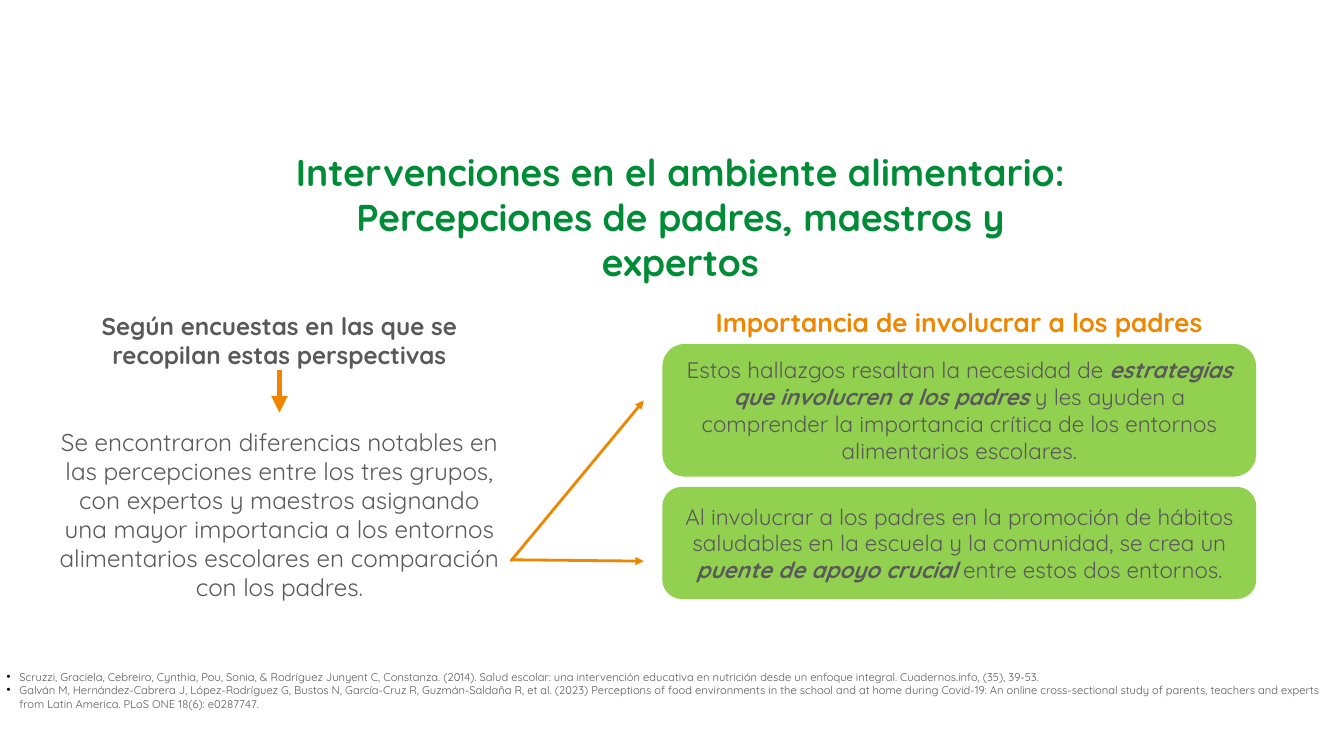
from dataclasses import dataclass

from lxml import etree
from pptx import Presentation
from pptx import util as u
from pptx.dml.color import RGBColor
from pptx.enum import shapes, text
from pptx.oxml.ns import qn

PX = 9144  # 100 px to the inch


@dataclass(frozen=True)
class Theme:
    font: str = "Quicksand"
    green: RGBColor = RGBColor(0x00, 0x8B, 0x36)
    orange: RGBColor = RGBColor(0xEF, 0x86, 0x00)
    grey: RGBColor = RGBColor(0x59, 0x59, 0x59)
    lime: RGBColor = RGBColor(0x92, 0xD0, 0x50)
    title: int = 40
    heading: int = 28
    body: int = 26
    card: int = 24
    source: int = 12


theme = Theme()


def style(para, size, color, bold=False, align=text.PP_ALIGN.CENTER):
    para.alignment = align
    para.font.name = theme.font
    para.font.size = u.Pt(size)
    para.font.color.rgb = color
    para.font.bold = bold


def add_box(left, top, width, height):
    box = page.shapes.add_textbox(left * PX, top * PX, width * PX, height * PX)
    box.text_frame.word_wrap = True
    return box.text_frame


deck = Presentation()
deck.slide_width, deck.slide_height = 2000 * PX, 1125 * PX
page = deck.slides.add_slide(deck.slide_layouts[5])

# Title
title = page.shapes.title
title.left, title.top, title.width, title.height = 420 * PX, 222 * PX, 1185 * PX, 153 * PX
frame = title.text_frame
frame.margin_left = frame.margin_top = frame.margin_right = frame.margin_bottom = 0
frame.vertical_anchor = text.MSO_ANCHOR.TOP
frame.auto_size = text.MSO_AUTO_SIZE.NONE
frame.word_wrap = True
frame.text = ("Intervenciones en el ambiente alimentario: "
              "Percepciones de padres, maestros y expertos")
style(frame.paragraphs[0], theme.title, theme.green, bold=True)

# Heading above the cards
frame = add_box(1047, 451, 760, 57)
frame.text = "Importancia de involucrar a los padres"
style(frame.paragraphs[0], theme.heading, theme.orange, bold=True)

# Survey finding
frame = add_box(72, 458, 688, 448)
frame.text = "Según encuestas en las que se recopilan estas perspectivas"
style(frame.paragraphs[0], theme.body, theme.grey, bold=True)
para = frame.add_paragraph()
para.text = ("Se encontraron diferencias notables en las percepciones entre los tres "
             "grupos, con expertos y maestros asignando una mayor importancia a los "
             "entornos alimentarios escolares en comparación con los padres.")
style(para, theme.body, theme.grey)
para.space_before = u.Pt(62)

# Cards: top, height, and text before, within and after the emphasis
cards = [
    (513, 195, "Estos hallazgos resaltan la necesidad de ",
     "estrategias que involucren a los padres",
     " y les ayuden a comprender la importancia crítica de los entornos "
     "alimentarios escolares."),
    (726, 164, "Al involucrar a los padres en la promoción de hábitos saludables en la "
     "escuela y la comunidad, se crea un ",
     "puente de apoyo crucial", " entre estos dos entornos."),
]
for top, height, before, emphasis, after in cards:
    card = page.shapes.add_shape(shapes.MSO_SHAPE.ROUNDED_RECTANGLE,
                                 987 * PX, top * PX, 881 * PX, height * PX)
    card.shadow.inherit = False
    card.fill.solid()
    card.fill.fore_color.rgb = theme.lime
    card.line.color.rgb = theme.lime
    card.line.width = u.Pt(2)
    card.text_frame.word_wrap = True
    card.text_frame.vertical_anchor = text.MSO_ANCHOR.MIDDLE
    para = card.text_frame.paragraphs[0]
    style(para, theme.card, theme.grey)
    for words in (before, emphasis, after):
        span = para.add_run()
        span.text = words
        span.font.color.rgb = theme.grey
        if words == emphasis:
            span.font.bold = span.font.italic = True

# Arrows: start, end, width in points
arrows = [
    ((416, 551), (416, 614), 6),
    ((760, 835), (958, 596), 3),
    ((760, 833), (958, 835), 3),
]
for (x1, y1), (x2, y2), width in arrows:
    arrow = page.shapes.add_connector(shapes.MSO_CONNECTOR.STRAIGHT,
                                      x1 * PX, y1 * PX, x2 * PX, y2 * PX)
    arrow.line.color.rgb = theme.orange
    arrow.line.width = u.Pt(width)
    etree.SubElement(arrow.line._get_or_add_ln(), qn("a:tailEnd"), type="triangle")
    etree.SubElement(arrow._element.spPr, qn("a:effectLst"))

# References
references = [
    "Scruzzi, Graciela, Cebreiro, Cynthia, Pou, Sonia, & Rodríguez Junyent C, Constanza. "
    "(2014). Salud escolar: una intervención educativa en nutrición desde un enfoque "
    "integral. Cuadernos.info, (35), 39-53.",
    "Galván M, Hernández-Cabrera J, López-Rodríguez G, Bustos N, García-Cruz R, "
    "Guzmán-Saldaña R, et al. (2023) Perceptions of food environments in the school and at "
    "home during Covid-19: An online cross-sectional study of parents, teachers and experts "
    "from Latin America. PLoS ONE 18(6): e0287747.",
]
frame = add_box(0, 992, 2000, 71)
frame.text = "\n".join(references)
for para in frame.paragraphs:
    props = para._p.get_or_add_pPr()
    props.set("marL", str(19 * PX))
    props.set("indent", str(-19 * PX))
    bullet_color = etree.SubElement(props, qn("a:buClr"))
    etree.SubElement(bullet_color, qn("a:srgbClr"), val="000000")
    etree.SubElement(props, qn("a:buFont"), typeface="Arial")
    etree.SubElement(props, qn("a:buChar"), char="•")
    style(para, theme.source, theme.grey, align=text.PP_ALIGN.LEFT)

deck.save("out.pptx")
